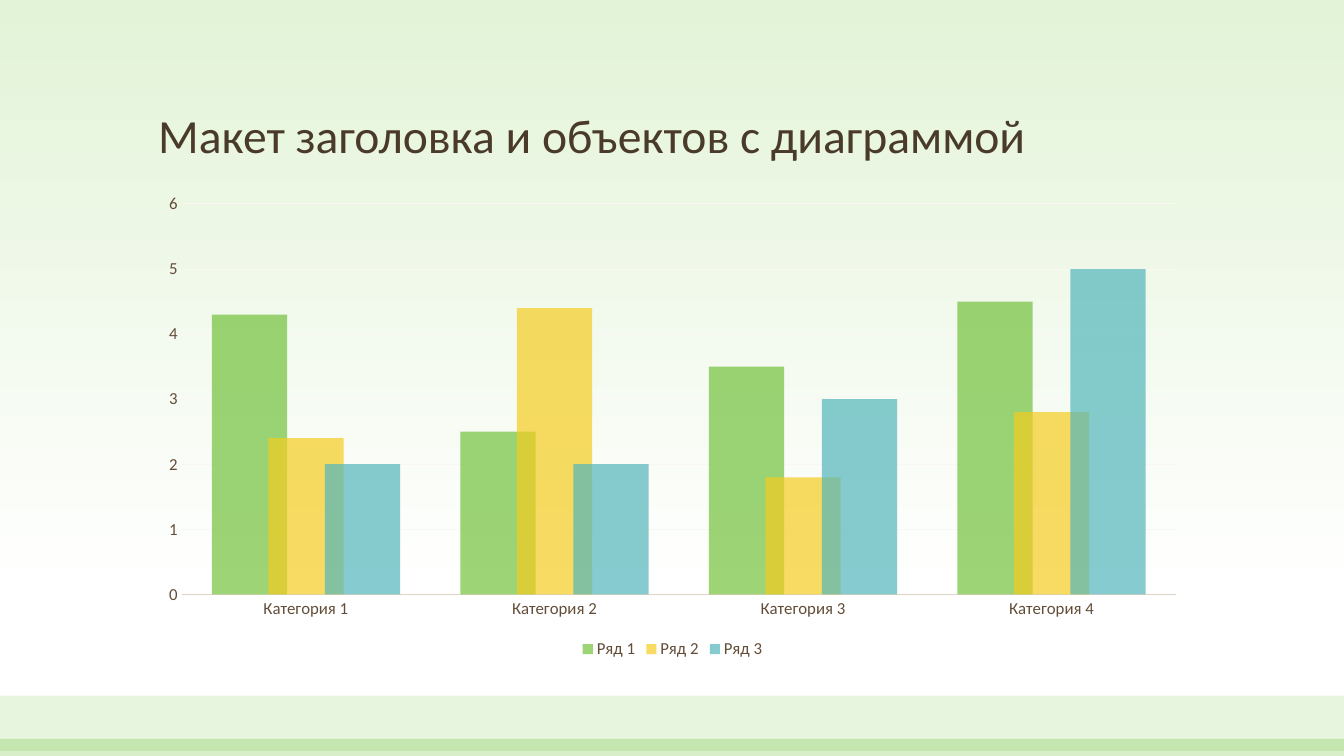
from dataclasses import dataclass

from lxml.etree import SubElement
from pptx import Presentation
from pptx.chart.data import CategoryChartData
from pptx.dml.color import RGBColor as RGB
from pptx.enum.chart import XL_CHART_TYPE as Chart
from pptx.enum.chart import XL_LEGEND_POSITION as Legend
from pptx.enum.chart import XL_TICK_MARK as Tick
from pptx.enum.shapes import MSO_SHAPE as Shape
from pptx.enum.text import MSO_ANCHOR as Anchor
from pptx.oxml.ns import qn
from pptx.util import Inches, Pt


@dataclass(frozen=True)
class Theme:
    font: str = "Calibri"
    title: str = "4A3A2A"
    text: str = "624D38"
    axis: str = "DFD2C6"
    grid: str = "F9F6F4"
    mint: str = "E3F3D8"
    white: str = "FFFFFF"
    green: str = "72C23C"
    gold: str = "F4CC20"
    teal: str = "53B6BB"
    head: int = 34
    body: int = 12
    small: int = 10


THEME = Theme()
WIDTH, HEIGHT = 13.33, 7.5
LEFT, SPAN = 1.47, 10.4
GROUPS = [f"Категория {n}" for n in range(1, 5)]
SERIES = [
    ("Ряд 1", (4.3, 2.5, 3.5, 4.5), THEME.green),
    ("Ряд 2", (2.4, 4.4, 1.8, 2.8), THEME.gold),
    ("Ряд 3", (2, 2, 3, 5), THEME.teal),
]


def paint(fill, color, alpha):
    """Fill with a solid colour at an opacity given in percent."""
    fill.solid()
    fill.fore_color.rgb = RGB.from_string(color)
    node = fill._xPr.find(qn("a:solidFill")).find(qn("a:srgbClr"))
    SubElement(node, qn("a:alpha")).set("val", str(alpha * 1000))


def style(font, size, color):
    font.name = THEME.font
    font.size = Pt(size)
    font.color.rgb = RGB.from_string(color)


def stroke(line, color, width):
    line.color.rgb = RGB.from_string(color)
    line.width = Pt(width)


def add_sky(slide):
    """Fade the background from mint at the top to white."""
    fill = slide.background.fill
    fill.gradient()
    fill.gradient_angle = 270
    stops = zip(fill.gradient_stops, (0, 0.79), (THEME.mint, THEME.white))
    for stop, place, color in stops:
        stop.position = place
        stop.color.rgb = RGB.from_string(color)


def add_band(slide, top, height, alpha):
    band = slide.shapes.add_shape(
        Shape.RECTANGLE, 0, Inches(top), Inches(WIDTH), Inches(height))
    band.shadow.inherit = False
    band.line.fill.background()
    paint(band.fill, THEME.green, alpha)


def add_title(slide, text):
    box = slide.shapes.add_textbox(
        Inches(LEFT), Inches(0.48), Inches(SPAN), Inches(1.19))
    frame = box.text_frame
    frame.word_wrap = True
    frame.vertical_anchor = Anchor.BOTTOM
    frame.text = text
    line = frame.paragraphs[0]
    line.line_spacing = 0.9
    style(line.runs[0].font, THEME.head, THEME.title)


def style_axes(chart):
    groups, values = chart.category_axis, chart.value_axis
    for axis in (groups, values):
        axis.major_tick_mark = axis.minor_tick_mark = Tick.NONE
        style(axis.tick_labels.font, THEME.body, THEME.text)
    stroke(groups.format.line, THEME.axis, 1.25)
    values.format.line.fill.background()
    values.minimum_scale, values.maximum_scale = 0, 6
    values.major_unit = 1
    values.has_major_gridlines = True
    stroke(values.major_gridlines.format.line, THEME.grid, 0.75)


def add_columns(slide):
    data = CategoryChartData()
    data.categories = GROUPS
    for name, values, _ in SERIES:
        data.add_series(name, values)
    chart = slide.shapes.add_chart(
        Chart.COLUMN_CLUSTERED, Inches(LEFT), Inches(1.83),
        Inches(SPAN), Inches(4.75), data).chart
    chart.has_title = False
    style(chart.font, THEME.small, THEME.text)
    style_axes(chart)
    chart.has_legend = True
    chart.legend.position = Legend.BOTTOM
    chart.legend.include_in_layout = False
    style(chart.legend.font, THEME.body, THEME.text)
    plot = chart.plots[0]
    plot.gap_width, plot.overlap = 80, 25
    plot.vary_by_categories = False
    for series, (_, _, color) in zip(plot.series, SERIES):
        series.invert_if_negative = False
        paint(series.format.fill, color, 70)


def main():
    deck = Presentation()
    deck.slide_width, deck.slide_height = Inches(WIDTH), Inches(HEIGHT)
    slide = deck.slides.add_slide(deck.slide_layouts[6])
    add_sky(slide)
    add_band(slide, 6.9, 0.55, 17)
    add_band(slide, 7.33, 0.17, 28)
    add_title(slide, "Макет заголовка и объектов с диаграммой")
    add_columns(slide)
    deck.save("out.pptx")


if __name__ == "__main__":
    main()
